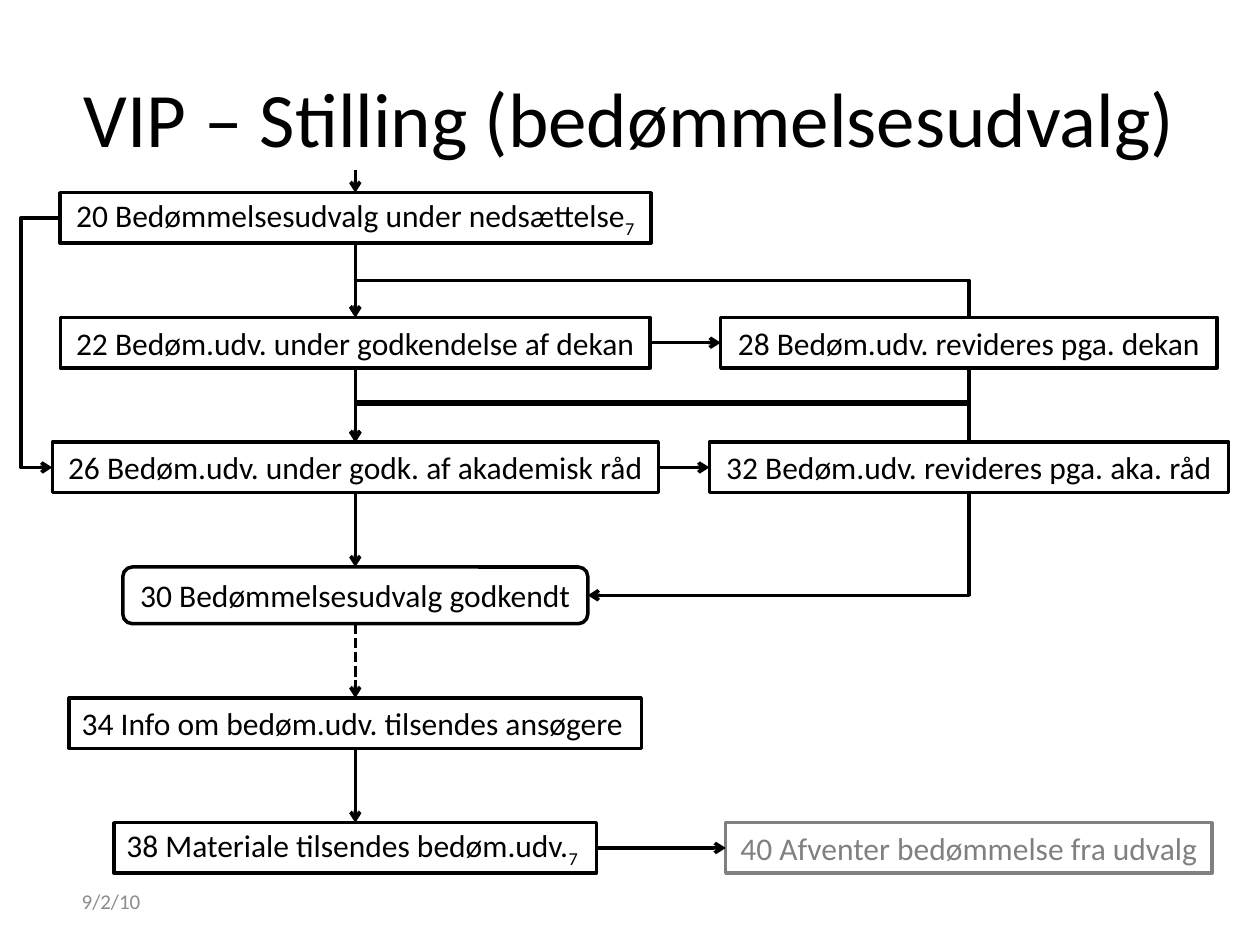
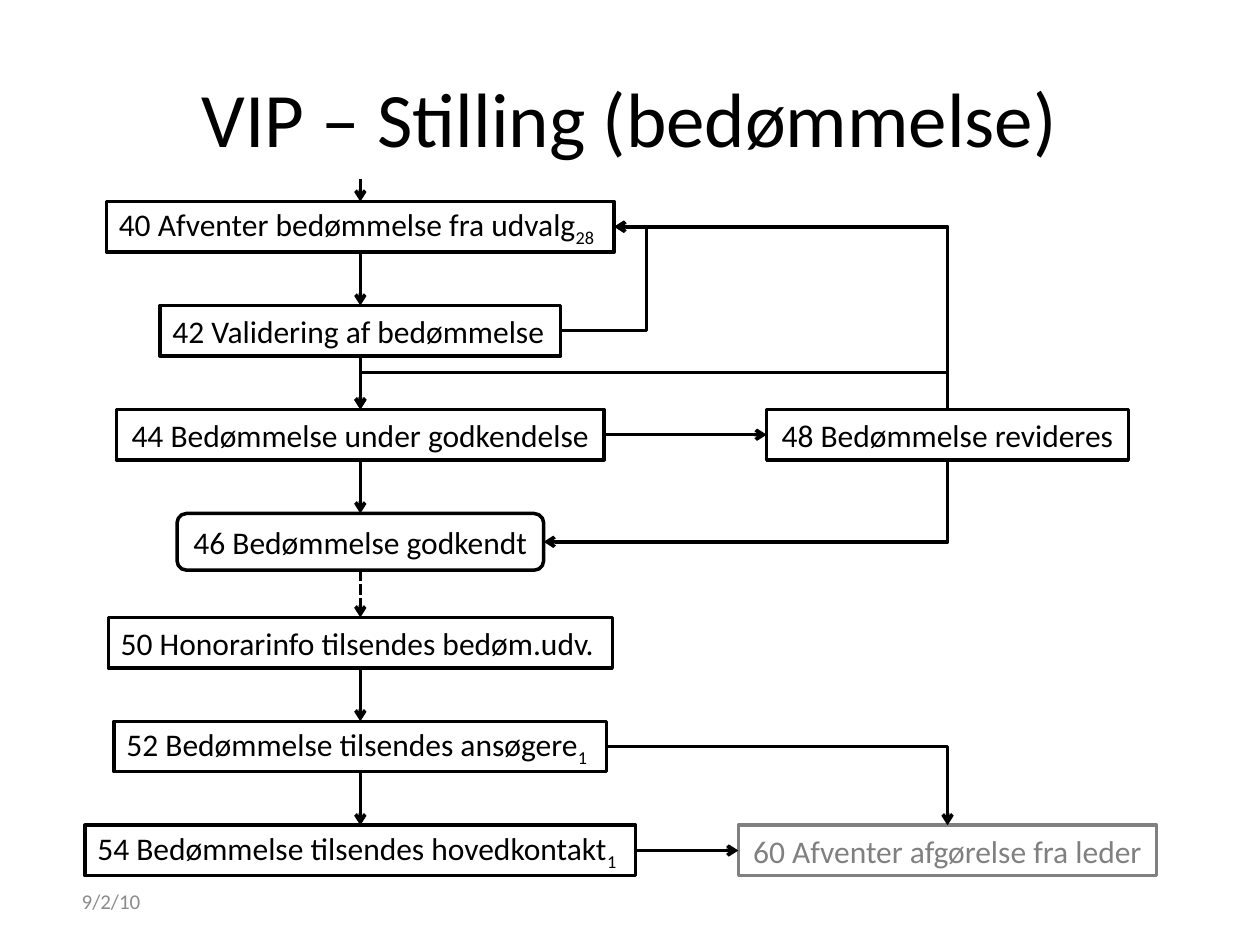
import dataclasses

import lxml.etree
import pptx
import pptx.dml.color
import pptx.enum.dml
import pptx.enum.shapes
import pptx.enum.text
import pptx.oxml.ns
import pptx.util

Inches = pptx.util.Inches
Shape = pptx.enum.shapes.MSO_SHAPE
Connector = pptx.enum.shapes.MSO_CONNECTOR
Align = pptx.enum.text.PP_ALIGN
qn = pptx.oxml.ns.qn


@dataclasses.dataclass(frozen=True)
class Theme:
    font: str = "Calibri"
    ink: str = "000000"
    muted: str = "808080"
    date_ink: str = "8C8C8C"
    title_size: int = 44
    step_size: int = 18
    date_size: int = 12
    line_width: int = 2
    step_height: float = 0.4
    milestone_height: float = 0.45
    entry_arrow: float = 0.18


THEME = Theme()
TOP, LEFT, BOTTOM, RIGHT = range(4)
HEADING = [(0, -1), (-1, 0), (0, 1), (1, 0)]
ROTATION = [270, 180, 90, 0]

# Steps: row, column, width, text, subscript (days), look.
# Detours: from step, side, to step, side, distance to the first bend (None for a single bend).
PAGES = [
    dict(
        title="VIP – Stilling (bedømmelsesudvalg)",
        columns=(2.82, 7.69), first_row=1.53, pitch=0.99, milestone_row=3, shift=0.05,
        steps=[
            (0, 0, 4.69, "20 Bedømmelsesudvalg under nedsættelse", "7", "center"),
            (1, 0, 4.68, "22 Bedøm.udv. under godkendelse af dekan", "", "center"),
            (2, 0, 4.81, "26 Bedøm.udv. under godk. af akademisk råd", "", "center"),
            (3, 0, 3.69, "30 Bedømmelsesudvalg godkendt", "", "milestone"),
            (4, 0, 4.54, "34 Info om bedøm.udv. tilsendes ansøgere", "", "left"),
            (5, 0, 3.83, "38 Materiale tilsendes bedøm.udv.", "7", "left"),
            (1, 1, 3.94, "28 Bedøm.udv. revideres pga. dekan", "", "center"),
            (2, 1, 4.12, "32 Bedøm.udv. revideres pga. aka. råd", "", "center"),
            (5, 1, 3.86, "40 Afventer bedømmelse fra udvalg", "", "muted"),
        ],
        detours=[
            ("28", TOP, "22", TOP, 0.25),
            ("28", BOTTOM, "26", TOP, 0.29),
            ("32", TOP, "26", TOP, 0.27),
            ("32", BOTTOM, "30", RIGHT, None),
            ("20", LEFT, "26", LEFT, 0.31),
        ],
    ),
    dict(
        title="VIP – Stilling (bedømmelse)",
        columns=(2.86, 7.52), first_row=1.6, pitch=4.95 / 6, milestone_row=3, shift=0,
        steps=[
            (0, 0, 4.03, "40 Afventer bedømmelse fra udvalg", "28", "left"),
            (1, 0, 3.18, "42 Validering af bedømmelse", "", "left"),
            (2, 0, 3.87, "44 Bedømmelse under godkendelse", "", "center"),
            (3, 0, 2.91, "46 Bedømmelse godkendt", "", "milestone"),
            (4, 0, 4.0, "50 Honorarinfo tilsendes bedøm.udv.", "", "left"),
            (5, 0, 3.91, "52 Bedømmelse tilsendes ansøgere", "1", "left"),
            (6, 0, 4.37, "54 Bedømmelse tilsendes hovedkontakt", "1", "left"),
            (2, 1, 2.87, "48 Bedømmelse revideres", "", "center"),
            (6, 1, 3.32, "60 Afventer afgørelse fra leder", "", "muted"),
        ],
        detours=[
            ("48", TOP, "40", RIGHT, None),
            ("48", BOTTOM, "46", RIGHT, None),
            ("48", TOP, "44", TOP, 0.25),
            ("42", RIGHT, "40", RIGHT, 0.68),
            ("52", RIGHT, "60", TOP, None),
        ],
    ),
]


def write(frame, text, size, color, align, subscript=""):
    """Fill a text frame with one paragraph and an optional subscript."""
    frame.vertical_anchor = pptx.enum.text.MSO_ANCHOR.MIDDLE
    para = frame.paragraphs[0]
    para.alignment = align
    para.font.name = THEME.font
    para.font.size = pptx.util.Pt(size)
    para.font.color.rgb = pptx.dml.color.RGBColor.from_string(color)
    para.add_run().text = text
    if subscript:
        span = para.add_run()
        span.text = subscript
        span._r.get_or_add_rPr().set("baseline", "-25000")


def add_arrow(page, kind, dashed=False):
    """Add a styled arrow, to be placed by the caller."""
    arrow = page.shapes.add_connector(kind, 0, 0, 0, 0)
    arrow.line.color.rgb = pptx.dml.color.RGBColor.from_string(THEME.ink)
    arrow.line.width = pptx.util.Pt(THEME.line_width)
    if dashed:
        arrow.line.dash_style = pptx.enum.dml.MSO_LINE.SQUARE_DOT
    lxml.etree.SubElement(arrow.line._get_or_add_ln(), qn("a:tailEnd"), type="arrow")
    lxml.etree.SubElement(arrow._element.spPr, qn("a:effectLst"))
    return arrow


deck = pptx.Presentation()
deck.slide_width, deck.slide_height = Inches(10), Inches(7.5)

for chart in PAGES:
    page = deck.slides.add_slide(deck.slide_layouts[6])
    for text, place, size, color, align in [
        (chart["title"], (0.5, 0.3, 9, 1.25), THEME.title_size, THEME.ink, Align.CENTER),
        ("9/2/10", (0.55, 6.95, 2.33, 0.4), THEME.date_size, THEME.date_ink, Align.LEFT),
    ]:
        frame = page.shapes.add_textbox(*map(Inches, place)).text_frame
        frame.word_wrap = True
        write(frame, text, size, color, align)

    boxes, cells = {}, {}
    for row, column, width, text, subscript, look in chart["steps"]:
        milestone = look == "milestone"
        color = THEME.muted if look == "muted" else THEME.ink
        top = chart["first_row"] + row * chart["pitch"]
        if row > chart["milestone_row"]:
            top += chart["shift"]
        box = page.shapes.add_shape(
            Shape.FLOWCHART_ALTERNATE_PROCESS if milestone else Shape.FLOWCHART_PROCESS,
            Inches(chart["columns"][column] - width / 2), Inches(top), Inches(width),
            Inches(THEME.milestone_height if milestone else THEME.step_height))
        box.shadow.inherit = False
        box.fill.background()
        box.line.color.rgb = pptx.dml.color.RGBColor.from_string(color)
        box.line.width = pptx.util.Pt(THEME.line_width)
        box.text_frame.word_wrap = False
        box.text_frame.auto_size = pptx.enum.text.MSO_AUTO_SIZE.SHAPE_TO_FIT_TEXT
        write(box.text_frame, text, THEME.step_size, color,
              Align.LEFT if look == "left" else Align.CENTER, subscript)
        boxes[text.split()[0]] = cells[row, column] = box

    # The main flow runs down the first column, with side steps to its right.
    for (row, column), box in cells.items():
        if column == 1:
            arrow = add_arrow(page, Connector.STRAIGHT)
            arrow.begin_connect(cells[row, 0], RIGHT)
            arrow.end_connect(box, LEFT)
            continue
        arrow = add_arrow(page, Connector.STRAIGHT, row == chart["milestone_row"] + 1)
        if row:
            arrow.begin_connect(cells[row - 1, 0], BOTTOM)
        else:
            arrow.begin_x = box.left + box.width // 2
            arrow.begin_y = box.top - Inches(THEME.entry_arrow)
        arrow.end_connect(box, TOP)

    # An elbow is laid out as if it left to the right, then turned to its heading.
    for start, start_side, end, end_side, bend in chart["detours"]:
        (x1, y1), (x2, y2) = [
            (box.left + box.width * (1 + HEADING[side][0]) // 2,
             box.top + box.height * (1 + HEADING[side][1]) // 2)
            for box, side in ((boxes[start], start_side), (boxes[end], end_side))]
        ahead_x, ahead_y = HEADING[start_side]
        ahead = max((x2 - x1) * ahead_x + (y2 - y1) * ahead_y, Inches(0.001))
        across = (y2 - y1) * ahead_x - (x2 - x1) * ahead_y
        elbow = add_arrow(page, Connector.ELBOW)
        elbow.width, elbow.height = ahead, abs(across)
        elbow.left = (x1 + x2 - ahead) // 2
        elbow.top = (y1 + y2 - abs(across)) // 2
        outline = elbow._element.spPr
        outline.xfrm.set("rot", str(ROTATION[start_side] * 60000))
        if across < 0:
            outline.xfrm.set("flipV", "1")
        geometry = outline.find(qn("a:prstGeom"))
        if bend is None:
            geometry.set("prst", "bentConnector2")
        else:
            share = round(Inches(bend) / ahead * 100000)
            lxml.etree.SubElement(geometry.find(qn("a:avLst")), qn("a:gd"),
                                  name="adj1", fmla=f"val {share}")

deck.save("out.pptx")
